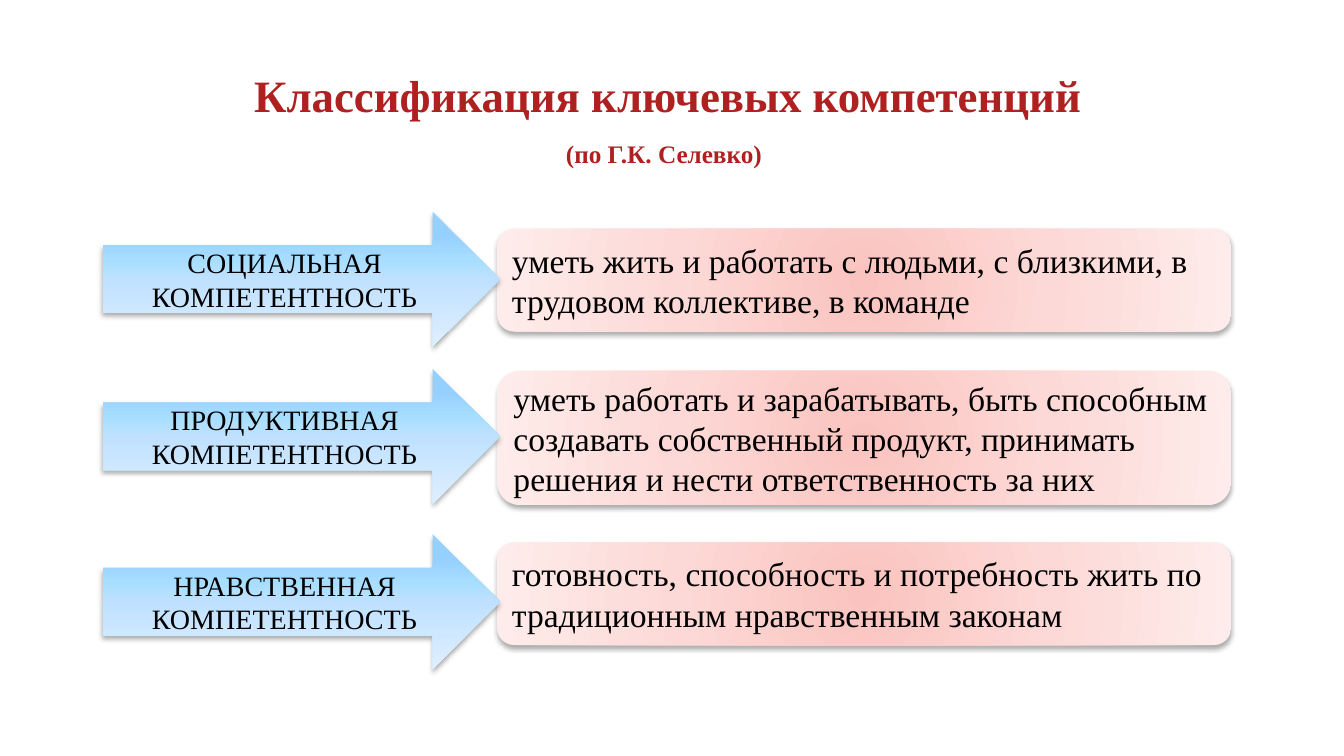
from lxml.etree import SubElement as Sub
from pptx import Presentation
from pptx.dml.color import RGBColor as Rgb
from pptx.enum.shapes import MSO_SHAPE as Kind
from pptx.enum.text import MSO_ANCHOR as Anchor, PP_ALIGN as Align
from pptx.oxml.ns import qn
from pptx.util import Inches, Pt

FONT = "Times New Roman"
HUES = {"head": "AF2121", "text": "000000", "shade": "000000"}
BLUE = [(18, "96D0FF"), (36, "A7DEFF"), (50, "BFE1FF"), (100, "E0EFFF")]
PINK = [(0, "FBC3BF"), (50, "FCD9D6"), (100, "FDECEB")]
ROWS = [
    (2.10, 2.27, 1.02, "СОЦИАЛЬНАЯ",
     "уметь жить и работать с людьми, с близкими, в трудовом коллективе, в команде"),
    (3.66, 3.68, 1.33, "ПРОДУКТИВНАЯ",
     "уметь работать и зарабатывать, быть способным создавать собственный продукт, "
     "принимать решения и нести ответственность за них"),
    (5.30, 5.38, 1.02, "НРАВСТВЕННАЯ",
     "готовность, способность и потребность жить по традиционным нравственным законам"),
]


def write(shape, *lines, size=24, hue="text", bold=False, align=Align.LEFT):
    frame = shape.text_frame
    frame.word_wrap = True
    frame.vertical_anchor = Anchor.MIDDLE
    for i, line in enumerate(lines):
        para = frame.add_paragraph() if i else frame.paragraphs[0]
        para.alignment = align
        para.line_spacing = 1.0
        para.space_before = Pt(0)
        run = para.add_run()
        run.text = line
        font = run.font
        font.name, font.size, font.bold = FONT, Pt(size), bold
        font.color.rgb = Rgb.from_string(HUES[hue])


def tint(shape, stops, radial=False):
    shape.line.fill.background()
    shape.shadow.inherit = False
    props = shape.element.spPr
    grad = Sub(props, qn("a:gradFill"), rotWithShape="1")
    props.find(qn("a:prstGeom")).addnext(grad)
    ramp = Sub(grad, qn("a:gsLst"))
    for pos, hue in stops:
        stop = Sub(ramp, qn("a:gs"), pos=str(pos * 1000))
        Sub(stop, qn("a:srgbClr"), val=hue)
    if radial:
        way = Sub(grad, qn("a:path"), path="circle")
        Sub(way, qn("a:fillToRect"), l="50000", t="50000", r="50000", b="50000")
    else:
        Sub(grad, qn("a:lin"), ang="5400000", scaled="0")
    shade = Sub(props.find(qn("a:effectLst")), qn("a:outerShdw"),
                blurRad=str(Pt(3.5)), dist=str(Pt(2.2)), dir="5400000",
                rotWithShape="0")
    color = Sub(shade, qn("a:srgbClr"), val=HUES["shade"])
    Sub(color, qn("a:alpha"), val="32000")


def place(slide, kind, x, y, w, h):
    return slide.shapes.add_shape(kind, Inches(x), Inches(y), Inches(w), Inches(h))


def header(slide, x, y, w):
    title = slide.shapes.title
    title.left, title.top = Inches(x), Inches(y)
    title.width, title.height = Inches(w), Inches(0.63)
    write(title, "Классификация ключевых компетенций",
          size=32, hue="head", bold=True, align=Align.CENTER)
    note = slide.shapes.add_textbox(
        Inches(x), Inches(y + 0.71), Inches(w - 0.08), Inches(0.39))
    write(note, "(по Г.К. Селевко)",
          size=18, hue="head", bold=True, align=Align.CENTER)


def card(slide, x, y, w, h, text):
    box = place(slide, Kind.ROUNDED_RECTANGLE, x, y, w, h)
    tint(box, PINK, radial=True)
    write(box, text)


def arrow(slide, x, y, w, h, name):
    shape = place(slide, Kind.RIGHT_ARROW, x, y, w, h)
    tint(shape, BLUE)
    write(shape, name, "КОМПЕТЕНТНОСТЬ", size=20, align=Align.CENTER)


def main():
    deck = Presentation()
    deck.slide_width, deck.slide_height = Inches(13.33), Inches(7.5)
    slide = deck.slides.add_slide(deck.slide_layouts[5])
    header(slide, 0.96, 0.62, 11.33)
    for tip, top, high, name, text in ROWS:
        card(slide, 4.93, top, 7.28, high, text)
        arrow(slide, 1.02, tip, 3.94, 1.34, name)
    deck.save("out.pptx")


if __name__ == "__main__":
    main()
